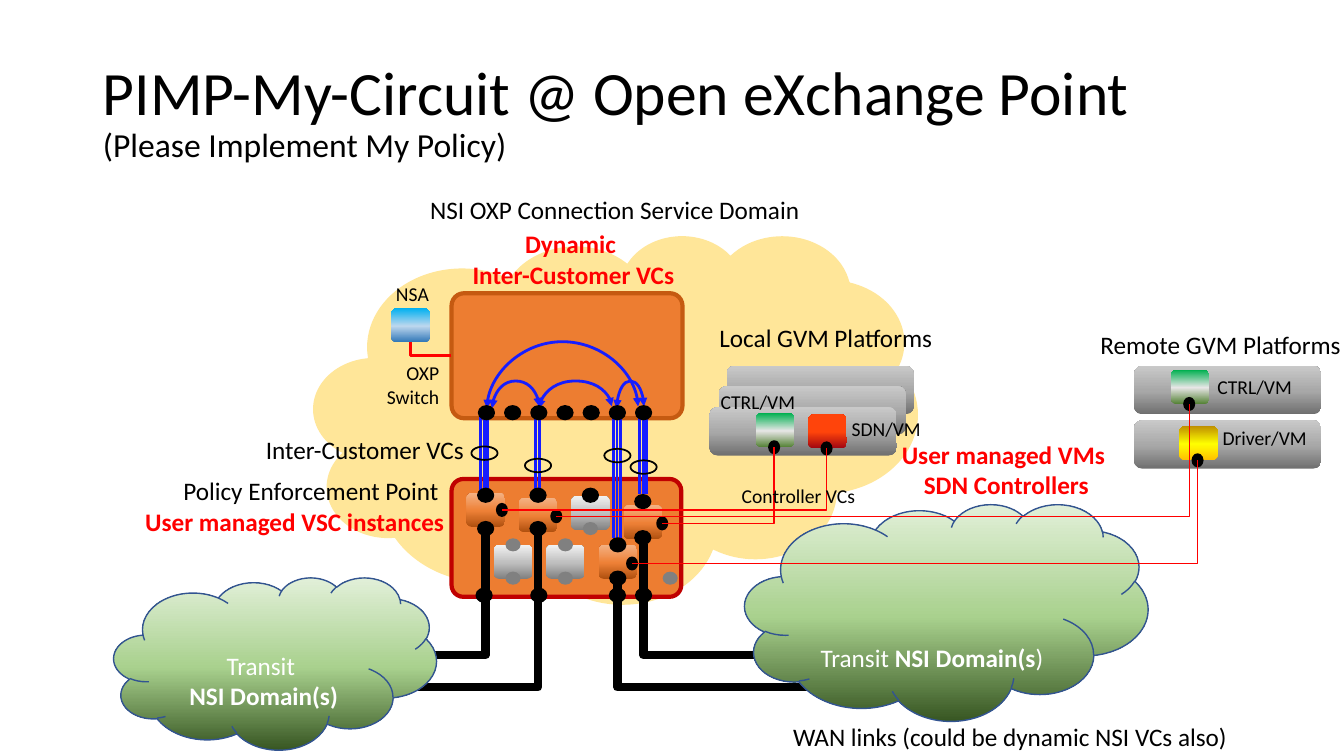
import copy

import pptx
import pptx.dml.color
import pptx.enum.shapes
import pptx.enum.text
import pptx.oxml.ns
import pptx.util

Cm, Pt = pptx.util.Cm, pptx.util.Pt
SHAPE = pptx.enum.shapes.MSO_SHAPE
CONNECTOR = pptx.enum.shapes.MSO_CONNECTOR
ALIGN = pptx.enum.text.PP_ALIGN
ANCHOR = pptx.enum.text.MSO_ANCHOR
FIT = pptx.enum.text.MSO_AUTO_SIZE
qn = pptx.oxml.ns.qn

FONT = "Calibri"
COLORS = {
    "black": "000000", "white": "FFFFFF", "red": "FF0000", "blue": "161DFF",
    "gray": "808080", "sand": "FFE699", "orange": "ED7D31", "rust": "C55A11",
    "crimson": "C00000", "navy": "325491",
}
# Three stops each, from the bottom up
GRADIENTS = {
    "slab": ("6F6F6F", "A8A8A8", "C9C9C9"),
    "active": ("B0500F", "EE8137", "F4B183"),
    "idle": ("808080", "BFBFBF", "F2F2F2"),
    "green VM": ("548235", "E7E6E6", "00B050"),
    "red VM": ("A00511", "FF440B", "FF440B"),
    "yellow VM": ("FFC000", "FFFF00", "BF9000"),
    "nsa": ("2E75B6", "BDD7EE", "00B0F0"),
    "transit": ("385723", "A9D18E", "E2F0D9"),
}
MODULE = (0.97, 0.86)
PORT = (0.38, 0.33)
CONTROL_PORT = (0.25, 0.3)
PITCH = 1.32


def rgb(name):
    return pptx.dml.color.RGBColor.from_string(COLORS.get(name, name))


def add_shape(page, kind, box, fill=None, line=None, weight=1, corner=None):
    shape = page.shapes.add_shape(kind, *map(Cm, box))
    shape.shadow.inherit = False
    if corner is not None:
        shape.adjustments[0] = corner
    if fill in GRADIENTS:
        shape.fill.gradient()
        shape.fill.gradient_angle = 90
        stops = shape._element.spPr.find(".//" + qn("a:gsLst"))
        stops.append(copy.deepcopy(stops[-1]))
        for stop, place, color in zip(shape.fill.gradient_stops, (0, 0.48, 1), GRADIENTS[fill]):
            stop.position = place
            stop.color.rgb = rgb(color)
    elif fill:
        shape.fill.solid()
        shape.fill.fore_color.rgb = rgb(fill)
    else:
        shape.fill.background()
    if line:
        shape.line.color.rgb = rgb(line)
        shape.line.width = Pt(weight)
    else:
        shape.line.fill.background()
    return shape


def add_centered(page, kind, center, size, *style):
    (x, y), (width, height) = center, size
    add_shape(page, kind, (x - width / 2, y - height / 2, width, height), *style)


def add_port(page, center, size=PORT, color="black"):
    add_centered(page, SHAPE.OVAL, center, size, color, "black" if color == "black" else None, 1.5)


def add_line(page, kind, start, end, color, weight):
    line = page.shapes.add_connector(kind, *map(Cm, (*start, *end)))
    line.line.color.rgb = rgb(color)
    line.line.width = Pt(weight)
    properties = line._element.spPr
    properties.append(properties.makeelement(qn("a:effectLst"), {}))
    return line


def add_elbow(page, start, end, color, weight):
    """Runs level from start, then turns once towards end."""
    line = add_line(page, CONNECTOR.ELBOW, start, end, color, weight)
    line._element.spPr.find(qn("a:prstGeom")).set("prst", "bentConnector2")


def add_arch(page, left, right, foot, peak):
    """Two-headed arch: a curved connector turned to point upwards."""
    rise, span, middle = 0.05, right - left, (left + right) / 2
    start = (middle - rise / 2, foot - rise / 2 - span / 2)
    line = add_line(page, CONNECTOR.CURVE, start, (start[0] + rise, start[1] + span), "blue", 2)
    properties = line._element.spPr
    properties.find(qn("a:xfrm")).set("rot", "16200000")
    guides = properties.find(qn("a:prstGeom")).get_or_add_avLst()
    bend = round((foot - peak) / rise * 100000)
    guides.append(guides.makeelement(qn("a:gd"), {"name": "adj1", "fmla": f"val {bend}"}))
    stroke = properties.find(qn("a:ln"))
    for end in ("a:headEnd", "a:tailEnd"):
        stroke.append(stroke.makeelement(qn(end), {"type": "triangle"}))


def add_label(page, box, lines, size=18, color="black", align=ALIGN.LEFT):
    """Each line is a text or a (text, color) pair; red lines are bold."""
    frame = page.shapes.add_textbox(*map(Cm, box)).text_frame
    frame.word_wrap = False
    frame.auto_size = FIT.SHAPE_TO_FIT_TEXT
    for index, line in enumerate(lines):
        text, shade = line if isinstance(line, tuple) else (line, color)
        para = frame.paragraphs[0] if index == 0 else frame.add_paragraph()
        para.text = text
        para.alignment = align
        para.font.name, para.font.size = FONT, Pt(size)
        para.font.bold = shade == "red"
        para.font.color.rgb = rgb(shade)


def write_title(page, box):
    title = page.shapes.title
    title.left, title.top, title.width, title.height = map(Cm, box)
    frame = title.text_frame
    frame.auto_size, frame.vertical_anchor = FIT.NONE, ANCHOR.MIDDLE
    para = frame.paragraphs[0]
    para.alignment, para.line_spacing = ALIGN.LEFT, 0.9
    para.font.name, para.font.color.rgb = FONT, rgb("black")
    for text, size in (("PIMP-My-Circuit @ Open eXchange Point", 44), ("(Please Implement My Policy)", 24)):
        if para.runs:
            para.add_line_break()
        span = para.add_run()
        span.text, span.font.size = text, Pt(size)


def draw_platforms(page, left, top, slabs, machines):
    """Stacked slabs with VMs; returns the control port of each VM."""
    for x, y in slabs:
        add_shape(page, SHAPE.ROUNDED_RECTANGLE, (left + x, top + y, 4.72, 1.22), "slab")
    ports = []
    for x, y, fill, name, name_x, name_y, name_width in machines:
        add_shape(page, SHAPE.ROUNDED_RECTANGLE, (left + x, top + y, *MODULE), fill)
        add_label(page, (left + name_x, top + name_y, name_width, 0.86), [name], 14)
        ports.append((left + x + 0.46, top + y + MODULE[1]))
    for port in ports:
        add_port(page, port, CONTROL_PORT)
    return ports


def draw_circuits(page, left, top):
    """Inter-customer VCs below the switch, and arches inside it."""
    for x, count, length, ring in ((0.82, 3, 1.9, 0.97), (2.17, 2, 1.95, 1.28),
                                   (4.17, 3, 3.1, 1.03), (4.83, 3, 2, 1.32)):
        for index in range(count):
            strand = left + x + (index - (count - 1) / 2) * 0.09
            add_line(page, CONNECTOR.STRAIGHT, (strand, top), (strand, top + length), "blue", 2)
        add_centered(page, SHAPE.OVAL, (left + x + 0.01, top + ring), (0.66, 0.34), None, "black", 1.25)
    for start, end, peak in ((1.02, 2.21, 0.85), (4.16, 4.85, 0.85), (2.21, 4.04, 0.85), (0.89, 4.7, 1.84)):
        add_arch(page, left + start, left + end, top - 0.16, top - peak)


def draw_switch_ports(page, left, top):
    for index in range(7):
        add_port(page, (left + 0.88 + index * PITCH / 2, top + 3.01))


def draw_nsa(page, left, top):
    add_shape(page, SHAPE.ROUNDED_RECTANGLE, (left, top, *MODULE), "nsa")
    add_label(page, (left - 0.13, top - 0.79, 1.35, 0.86), ["NSA"], 14)
    add_elbow(page, (left + 1.52, top + 1.2), (left + 0.48, top + 0.86), "red", 2)
    add_label(page, (left - 0.39, top + 1.2, 1.85, 1.45), ["OXP", "Switch"], 14, align=ALIGN.RIGHT)


def draw_vsc_instances(page, left, top):
    """Modules of the enforcement point; returns their control ports."""
    upper = ((0.78, 0.41, 1.25, "active"), (0.91, 0.41, 1.25, "active"),
             (0.86, 0.41, 1.25, "idle"), (1.09, 0.57, 1.48, "active"))
    for column, (middle, above, below, fill) in enumerate(upper):
        x = left + 0.86 + column * PITCH
        add_centered(page, SHAPE.ROUNDED_RECTANGLE, (x, top + middle), MODULE, fill)
        add_port(page, (x, top + above))
        add_port(page, (x, top + below), color="gray" if fill == "idle" else "black")
    for column, fill in enumerate(("idle", "idle", "active")):
        x = left + 1.55 + column * PITCH
        add_centered(page, SHAPE.ROUNDED_RECTANGLE, (x, top + 2.09), MODULE, fill)
        for y in (1.66, 2.5):
            add_port(page, (x, top + y), color="gray" if fill == "idle" else "black")
    add_port(page, (left + 1.55 + 3 * PITCH, top + 2.5), color="gray")
    for x in (0.82, 2.2, 4.18, 4.84):
        add_port(page, (left + x, top + 2.93))
    ports = [(left + x, top + y) for x, y in ((5.31, 1.12), (1.27, 0.78), (4.55, 2.13), (2.64, 0.94))]
    for port in ports:
        add_port(page, port, CONTROL_PORT)
    return ports


def draw_wan_links(page, left, top):
    for start, end in (((-2.59, 4.44), (0.86, 1.42)), ((-2.62, 5.25), (2.18, 1.42)),
                       ((9.19, 5.25), (4.18, 2.61)), ((9.19, 4.44), (4.84, 1.65))):
        add_elbow(page, (left + start[0], top + start[1]), (left + end[0], top + end[1]), "black", 6)


def draw_transit(page, box, lines):
    frame = add_shape(page, SHAPE.CLOUD, box, "transit", "navy").text_frame
    frame.vertical_anchor = ANCHOR.BOTTOM
    for index, spans in enumerate(lines):
        para = frame.paragraphs[0] if index == 0 else frame.add_paragraph()
        para.alignment = ALIGN.CENTER
        para.font.name, para.font.size, para.font.color.rgb = FONT, Pt(18), rgb("white")
        for text, bold in spans:
            span = para.add_run()
            span.text, span.font.bold = text, bold


def draw_slide(page):
    switch, enforcement = (11.38, 7.39), (11.38, 12.07)
    write_title(page, (2.34, 1.02, 29.21, 3.68))
    # Exchange domain and its platforms
    add_shape(page, SHAPE.CLOUD, (7.92, 5.94, 15.19, 9.25), "sand", "sand")
    remote = draw_platforms(page, 28.58, 9.22, ((0, 1.37), (0, 0)), (
        (1.14, 1.52, "yellow VM", "Driver/VM", 1.98, 1.4, 2.77),
        (0.93, 0.1, "green VM", "CTRL/VM", 1.85, 0.1, 2.62)))
    local = draw_platforms(page, 17.88, 9.22, ((0.43, 0), (0.23, 0.51), (0, 1.04)), (
        (1.17, 1.19, "green VM", "CTRL/VM", 0.03, 0.48, 2.62),
        (2.49, 1.22, "red VM", "SDN/VM", 3.33, 1.17, 2.26)))
    # Switch, enforcement point and cabling
    add_shape(page, SHAPE.ROUNDED_RECTANGLE, (*switch, 5.82, 3.15), "orange", "rust", 3, 0.1)
    add_shape(page, SHAPE.ROUNDED_RECTANGLE, (*enforcement, 5.79, 2.97), "orange", "crimson", 3, 0.1)
    draw_wan_links(page, *enforcement)
    draw_circuits(page, switch[0], switch[1] + 3.06)
    draw_switch_ports(page, *switch)
    draw_nsa(page, 9.86, 7.77)
    control_ports = draw_vsc_instances(page, *enforcement)
    # Transit domains
    draw_transit(page, (18.77, 12.7, 10.16, 5.46), [[("Transit ", False), ("NSI Domain(s", True), (")", False)]])
    draw_transit(page, (2.87, 14.55, 8.13, 4.34), [[("Transit ", False)], [("NSI Domain(s)", True)]])
    # Controller VCs
    for port, machine in zip(control_ports, local + remote):
        add_elbow(page, port, machine, "red", 1)
    # Labels
    add_label(page, (10.59, 4.78, 9.93, 1.02), ["NSI OXP Connection Service Domain"])
    add_label(page, (11.63, 5.64, 5.64, 1.8), ["Dynamic ", "Inter-Customer VCs"], color="red", align=ALIGN.CENTER)
    add_label(page, (3.35, 11.86, 8.1, 1.8),
              ["Policy Enforcement Point ", ("User managed VSC instances", "red")], align=ALIGN.RIGHT)
    add_label(page, (6.45, 10.82, 5.56, 1.02), ["Inter-Customer VCs"])
    add_label(page, (17.88, 8, 5.94, 1.02), ["Local GVM Platforms"])
    add_label(page, (27.48, 8.18, 6.65, 1.02), ["Remote GVM Platforms"])
    add_label(page, (18.44, 12.07, 3.4, 0.86), ["Controller VCs"], 14)
    add_label(page, (22.45, 10.95, 5.82, 1.8),
              ["User managed VMs ", "SDN Controllers"], color="red", align=ALIGN.CENTER)
    add_label(page, (19.74, 18.06, 11.58, 1.02), ["WAN links (could be dynamic NSI VCs also)"])


def main():
    deck = pptx.Presentation()
    deck.slide_width, deck.slide_height = Cm(33.87), Cm(19.05)
    draw_slide(deck.slides.add_slide(deck.slide_layouts[5]))
    deck.save("out.pptx")


if __name__ == "__main__":
    main()
